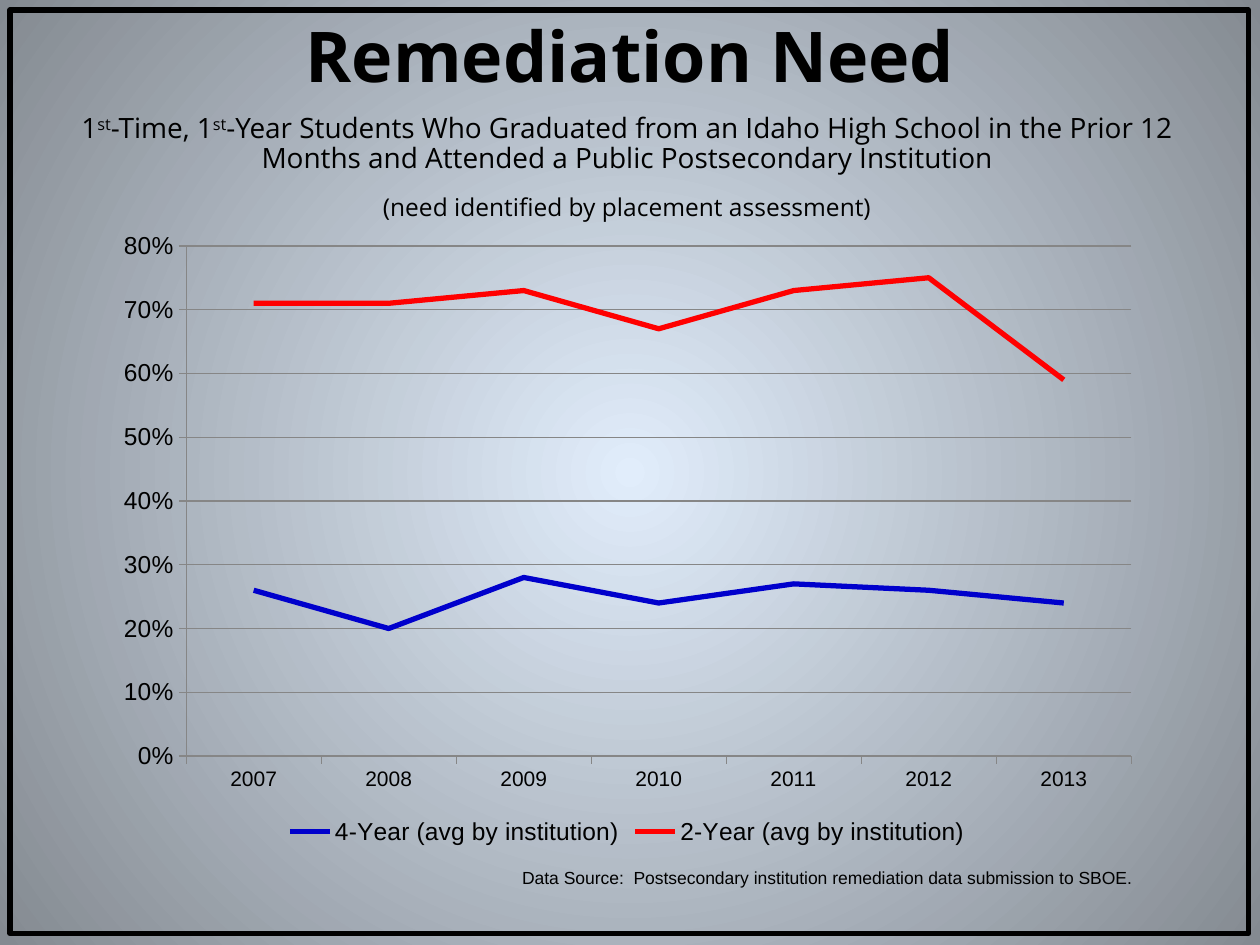
from lxml import etree
from pptx import Presentation
from pptx.chart.data import CategoryChartData
from pptx.dml.color import RGBColor
from pptx.enum.chart import XL_CHART_TYPE as CT, XL_LEGEND_POSITION as LP
from pptx.enum.chart import XL_MARKER_STYLE as MS, XL_TICK_MARK as TM
from pptx.enum.shapes import MSO_SHAPE
from pptx.enum.text import MSO_ANCHOR, PP_ALIGN
from pptx.oxml import parse_xml
from pptx.oxml.ns import nsdecls, qn
from pptx.util import Cm, Pt

BLACK = RGBColor(0x00, 0x00, 0x00)
GRID = RGBColor(0x86, 0x86, 0x86)
BLUE = RGBColor(0x00, 0x00, 0xCC)
RED = RGBColor(0xFF, 0x00, 0x00)
CENTER_BG = RGBColor(0xE1, 0xED, 0xFB)
EDGE_BG = RGBColor(0x84, 0x8A, 0x91)

prs = Presentation()
prs.slide_width, prs.slide_height = Cm(25.4), Cm(19.05)
s = prs.slides.add_slide(prs.slide_layouts[6])


def add_box(left, top, width, height):
    tf = s.shapes.add_textbox(Cm(left), Cm(top), Cm(width), Cm(height)).text_frame
    tf.word_wrap = True
    tf.vertical_anchor = MSO_ANCHOR.TOP
    return tf


def add_run(p, text, size, name="Open Sans", bold=False):
    r = p.add_run()
    r.text = text
    r.font.size, r.font.name, r.font.bold = Pt(size), name, bold
    r.font.color.rgb = BLACK
    return r


# Background: circular gradient from the slide centre
fill = s.background.fill
fill.gradient()
for stop, color, pos in zip(fill.gradient_stops, (CENTER_BG, EDGE_BG), (0, 1)):
    stop.color.rgb = color
    stop.position = pos
grad = s.element.find(".//" + qn("a:gradFill"))
circle = parse_xml(
    f'<a:path {nsdecls("a")} path="circle">'
    '<a:fillToRect l="50000" t="50000" r="50000" b="50000"/></a:path>')
grad.replace(grad.find(qn("a:lin")), circle)

# Border
sp = s.shapes.add_shape(MSO_SHAPE.RECTANGLE, Cm(0.2), Cm(0.2), Cm(24.97), Cm(18.62))
sp.shadow.inherit = False
sp.fill.background()
sp.line.color.rgb = BLACK
sp.line.width = Pt(3)

# Title
tf = add_box(1.27, 0.2, 22.86, 3.18)
tf.margin_top = Cm(0.05)
p = tf.paragraphs[0]
p.alignment = PP_ALIGN.CENTER
add_run(p, "Remediation Need", 40, bold=True)

# Data source
p = add_box(7.82, 17.35, 15.24, 1.12).paragraphs[0]
p.alignment = PP_ALIGN.RIGHT
add_run(p, "Data Source:  Postsecondary institution remediation data submission to SBOE.",
        10, "Arial")

# Line chart
data = CategoryChartData(number_format="0%")
data.categories = [str(year) for year in range(2007, 2014)]
data.add_series("4-Year (avg by institution)", (0.26, 0.2, 0.28, 0.24, 0.27, 0.26, 0.24))
data.add_series("2-Year (avg by institution)", (0.71, 0.71, 0.73, 0.67, 0.73, 0.75, 0.59))
chart = s.shapes.add_chart(CT.LINE, Cm(2.06), Cm(4.45), Cm(21.17), Cm(12.7), data).chart
chart.has_title = False
chart.font.size, chart.font.name = Pt(12), "Arial"
chart.font.color.rgb = BLACK

plot = chart.plots[0]
plot.vary_by_categories = False
for series, color in zip(plot.series, (BLUE, RED)):
    series.smooth = False
    series.marker.style = MS.NONE
    series.format.line.color.rgb = color
    series.format.line.width = Pt(3)

val, cat = chart.value_axis, chart.category_axis
for axis in (val, cat):
    axis.major_tick_mark = TM.OUTSIDE
    axis.minor_tick_mark = TM.NONE
    axis.format.line.color.rgb = GRID
val.minimum_scale, val.maximum_scale, val.major_unit = 0, 0.8, 0.1
val.has_major_gridlines = True
val.major_gridlines.format.line.color.rgb = GRID
val.tick_labels.font.size = Pt(14)
val.tick_labels.number_format = "0%"
val.tick_labels.number_format_is_linked = False

chart.has_legend = True
chart.legend.position = LP.BOTTOM
chart.legend.include_in_layout = False
chart.legend.font.size = Pt(14)

# Fixed inner plot area, as fractions of the chart
area = chart.element.find(".//" + qn("c:plotArea"))
for old in area.findall(qn("c:layout")):
    area.remove(old)
layout = etree.Element(qn("c:layout"))
manual = etree.SubElement(layout, qn("c:manualLayout"))
for tag, value in (("layoutTarget", "inner"), ("xMode", "edge"), ("yMode", "edge"),
                   ("x", 0.08), ("y", 0.04), ("w", 0.9), ("h", 0.81)):
    etree.SubElement(manual, qn("c:" + tag)).set("val", str(value))
area.insert(0, layout)

# Subtitle with raised ordinals
tf = add_box(0.58, 2.18, 24.13, 2.74)
p = tf.paragraphs[0]
for text in ("1", "st", "-Time, 1", "st",
             "-Year Students Who Graduated from an Idaho High School in the Prior 12 "
             "Months and Attended a Public Postsecondary Institution"):
    r = add_run(p, text, 16)
    if text == "st":
        r.font._element.set("baseline", "30000")
p = tf.add_paragraph()
p.space_before = Pt(12)
add_run(p, "(need identified by placement assessment)", 14)
for p in tf.paragraphs:
    p.alignment = PP_ALIGN.CENTER
    p.line_spacing = 0.9

prs.save("out.pptx")
